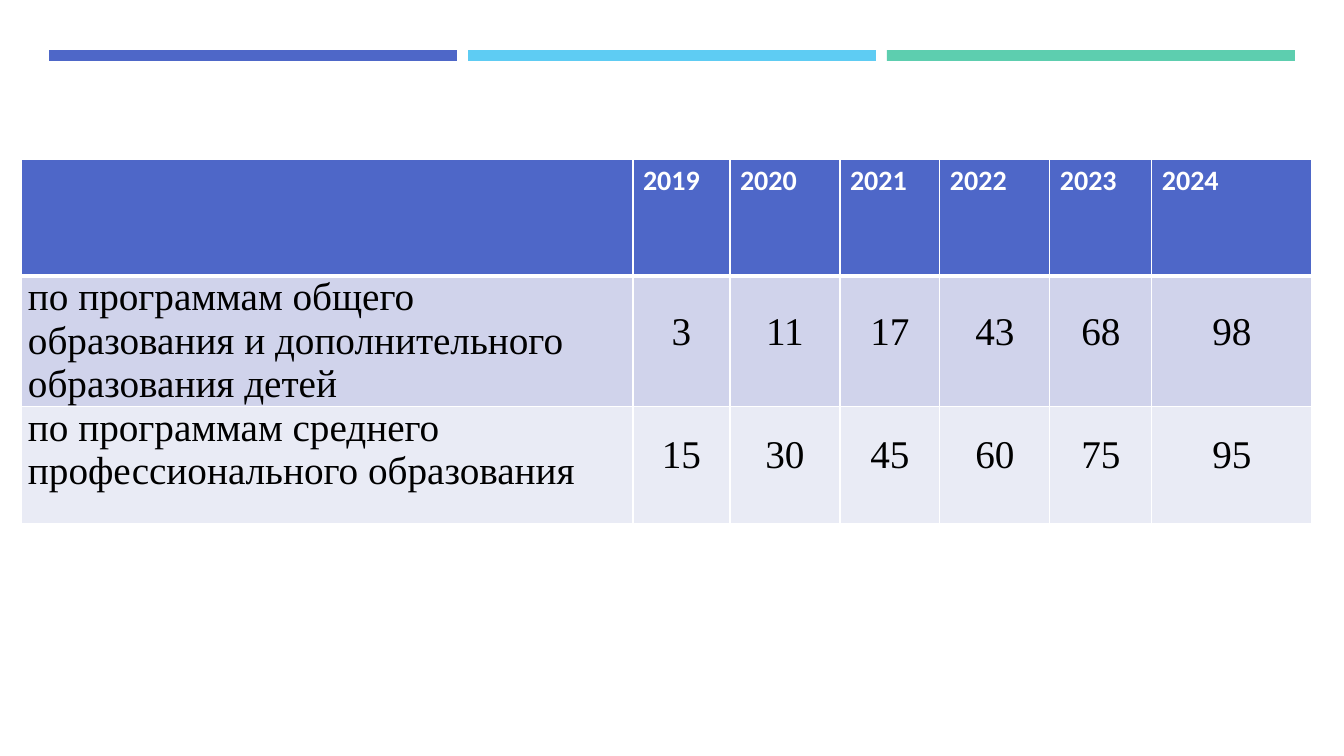
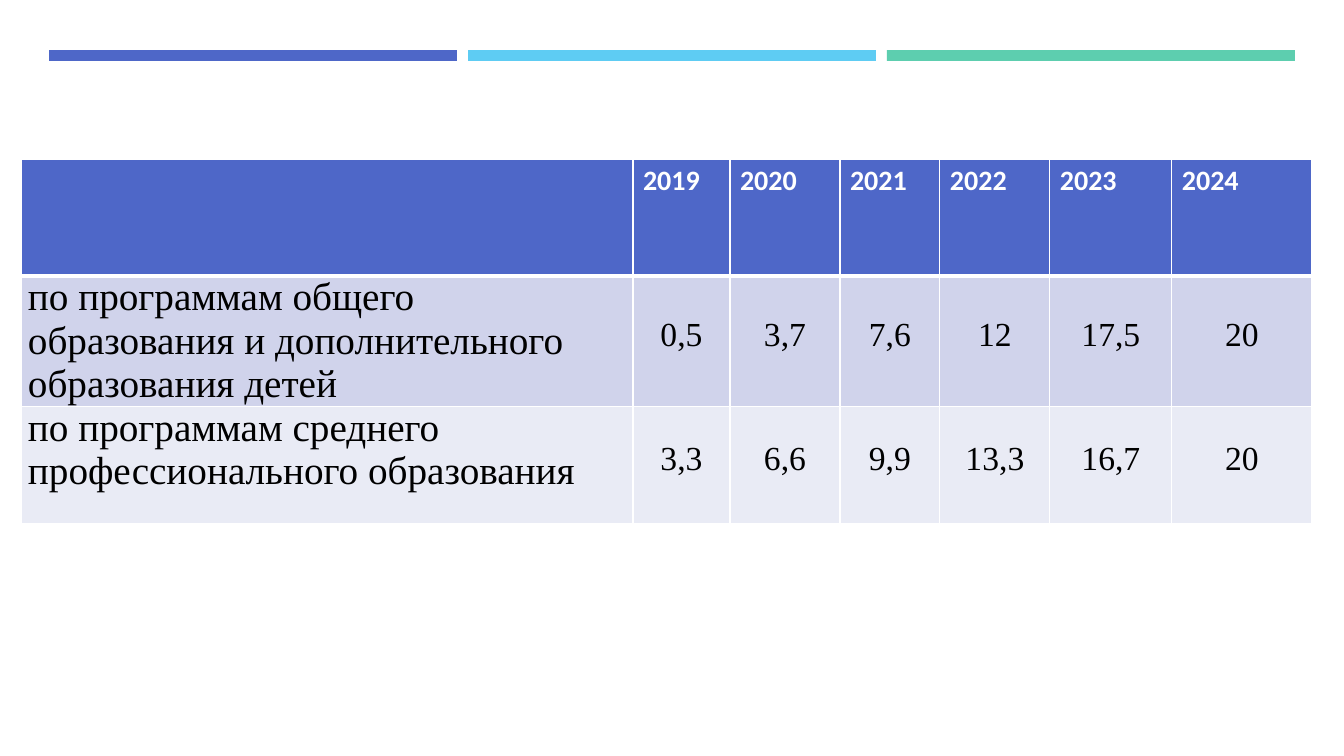
"""Builds two slides that tabulate yearly figures by education programme."""
from dataclasses import dataclass

from lxml import etree
from pptx import Presentation
from pptx import util as u
from pptx.dml.color import RGBColor
from pptx.enum import shapes, text
from pptx.oxml import ns

PX = u.Inches(1) / 100.8

BLUE = RGBColor(0x4E, 0x67, 0xC8)
SKY = RGBColor(0x5E, 0xCC, 0xF3)
GREEN = RGBColor(0x5D, 0xCE, 0xAF)
LAVENDER = RGBColor(0xD0, 0xD3, 0xEB)
PALE = RGBColor(0xE9, 0xEB, 0xF5)
WHITE = RGBColor(0xFF, 0xFF, 0xFF)
BLACK = RGBColor(0x00, 0x00, 0x00)

HEADING_FONT = "Calibri"
BODY_FONT = "Times New Roman"

BAND_COLORS = (BLUE, SKY, GREEN)
BAND_LEFT, BAND_TOP, BAND_WIDTH, BAND_HEIGHT, BAND_GAP = 49, 50, 408, 11, 11

TABLE_LEFT, TABLE_TOP = 21, 159
ROW_HEIGHTS = (117, 130, 117)
ROW_FILLS = (BLUE, LAVENDER, PALE)
YEARS = ("2019", "2020", "2021", "2022", "2023", "2024")
PROGRAMMES = (
    "по программам общего образования и дополнительного образования детей",
    "по программам среднего профессионального образования",
)


@dataclass(frozen=True)
class YearTable:
    """Figures of one slide with their column widths and text size."""

    column_widths: tuple[int, ...]
    value_size: int
    values: tuple[tuple[str, ...], ...]


TABLES = (
    YearTable(
        (612, 97, 110, 100, 110, 102, 160),
        28,
        (("3", "11", "17", "43", "68", "98"), ("15", "30", "45", "60", "75", "95")),
    ),
    YearTable(
        (612, 97, 110, 100, 110, 122, 140),
        24,
        (("0,5", "3,7", "7,6", "12", "17,5", "20"), ("3,3", "6,6", "9,9", "13,3", "16,7", "20")),
    ),
)


def px(length: int) -> u.Emu:
    """Turn pixels into EMU."""
    return u.Emu(round(length * PX))


def write(frame, content: str, *, font: str, size: int, color: RGBColor, bold: bool = False,
          align=text.PP_ALIGN.LEFT, spacing=None) -> None:
    """Fill a text frame with one formatted paragraph."""
    paragraph = frame.paragraphs[0]
    paragraph.alignment = align
    paragraph.line_spacing = spacing
    run = paragraph.add_run()
    run.text = content
    run.font.name = font
    run.font.size = u.Pt(size)
    run.font.bold = bold
    run.font.color.rgb = color


def set_borders(cell, *, top: int = 1, bottom: int = 1) -> None:
    """Draw white cell borders with widths in points."""
    properties = cell._tc.get_or_add_tcPr()
    sides = (("a:lnL", 1), ("a:lnR", 1), ("a:lnT", top), ("a:lnB", bottom))
    for index, (tag, width) in enumerate(sides):
        line = etree.Element(ns.qn(tag), w=str(u.Pt(width)))
        fill = etree.SubElement(line, ns.qn("a:solidFill"))
        etree.SubElement(fill, ns.qn("a:srgbClr"), val=str(WHITE))
        properties.insert(index, line)


def add_bands(slide) -> None:
    """Draw the three coloured bands at the top of a slide."""
    for index, color in enumerate(BAND_COLORS):
        left = BAND_LEFT + index * (BAND_WIDTH + BAND_GAP)
        band = slide.shapes.add_shape(shapes.MSO_SHAPE.RECTANGLE, px(left), px(BAND_TOP),
                                      px(BAND_WIDTH), px(BAND_HEIGHT))
        band.shadow.inherit = False
        band.fill.solid()
        band.fill.fore_color.rgb = color
        band.line.fill.background()


def fill_body_cell(cell, content: str, is_label: bool, value_size: int) -> None:
    """Write a programme name or a centred figure."""
    cell.margin_left = cell.margin_right = px(7)
    cell.margin_top = cell.margin_bottom = 0
    if is_label:
        write(cell.text_frame, content, font=BODY_FONT, size=28, color=BLACK)
        return
    cell.vertical_anchor = text.MSO_ANCHOR.MIDDLE
    write(cell.text_frame, content, font=BODY_FONT, size=value_size, color=BLACK,
          align=text.PP_ALIGN.CENTER, spacing=u.Pt(18))


def add_year_table(slide, data: YearTable) -> None:
    """Add the table of figures by programme and year."""
    rows = [("", *YEARS)]
    rows += [(name, *values) for name, values in zip(PROGRAMMES, data.values)]
    table = slide.shapes.add_table(
        len(rows), len(data.column_widths), px(TABLE_LEFT), px(TABLE_TOP),
        px(sum(data.column_widths)), px(sum(ROW_HEIGHTS))).table
    for column, width in zip(table.columns, data.column_widths):
        column.width = px(width)
    for row_index, contents in enumerate(rows):
        table.rows[row_index].height = px(ROW_HEIGHTS[row_index])
        for column_index, content in enumerate(contents):
            cell = table.cell(row_index, column_index)
            cell.fill.solid()
            cell.fill.fore_color.rgb = ROW_FILLS[row_index]
            set_borders(cell, top=3 if row_index == 1 else 1, bottom=3 if row_index == 0 else 1)
            if row_index:
                fill_body_cell(cell, content, column_index == 0, data.value_size)
            elif content:
                write(cell.text_frame, content, font=HEADING_FONT, size=20, color=WHITE, bold=True)


def main() -> None:
    """Build and save the presentation."""
    presentation = Presentation()
    presentation.slide_width, presentation.slide_height = px(1344), px(756)
    blank_layout = presentation.slide_layouts[6]
    for data in TABLES:
        slide = presentation.slides.add_slide(blank_layout)
        add_bands(slide)
        add_year_table(slide, data)
    presentation.save("out.pptx")


if __name__ == "__main__":
    main()
